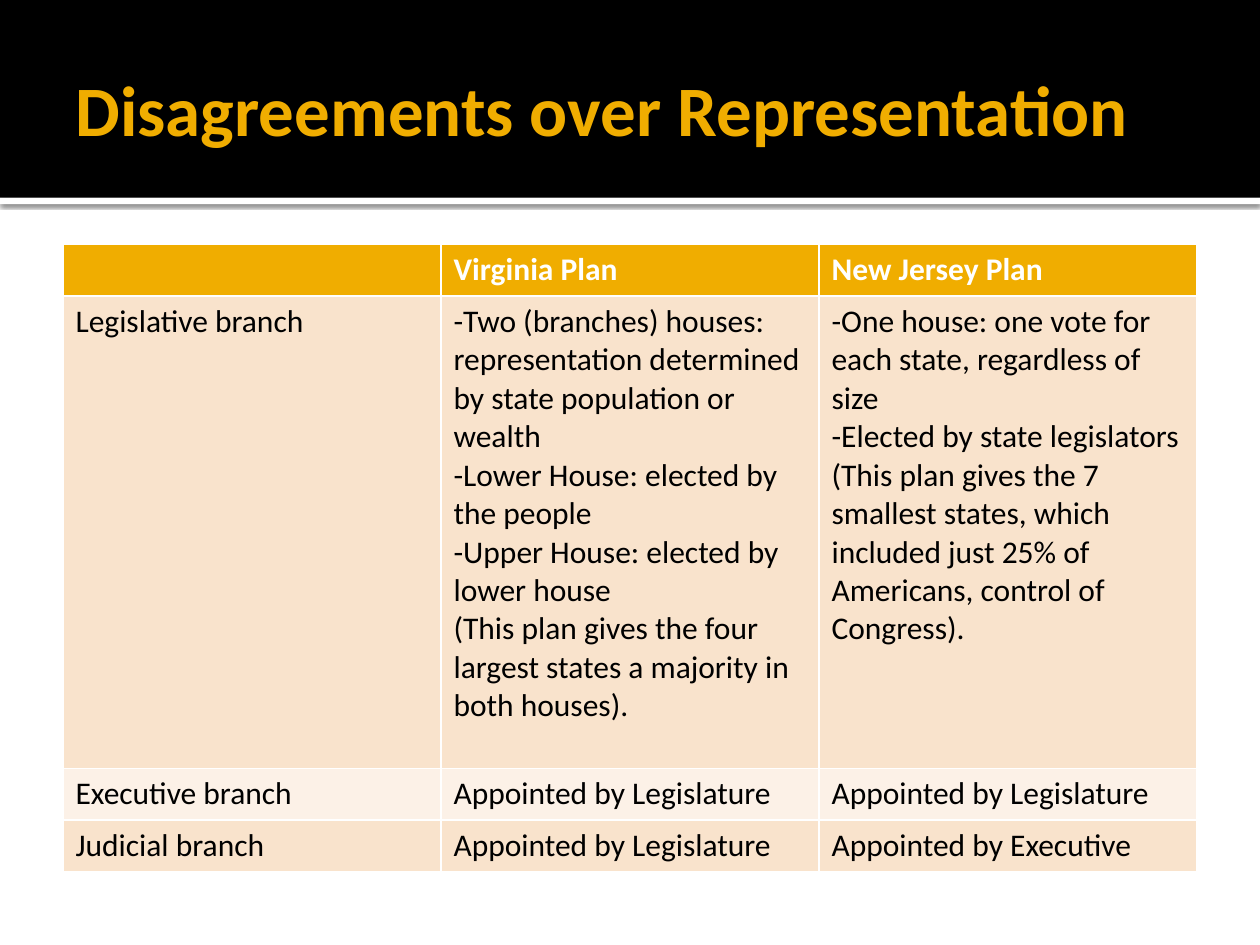
import pptx
import pptx.util
import pptx.dml.color
import pptx.enum.shapes
import pptx.enum.text
import pptx.oxml
import pptx.oxml.ns

COLORS = {
    "white": "FFFFFF",
    "black": "000000",
    "gold": "F0AD00",
    "band_dark": "F9E3CC",
    "band_light": "FCF1E7",
}
FONT = "Calibri"
WIDTH, HEIGHT = 10, 7.5
ROW_HEIGHTS = (0.41, 3.75, 0.41, 0.41)
PLANS = [
    [[], ["Virginia Plan"], ["New Jersey Plan"]],
    [
        ["Legislative branch"],
        [
            "-Two (branches) houses: representation determined by state population or wealth",
            "-Lower House: elected by the people",
            "-Upper House: elected by lower house",
            "(This plan gives the four largest states a majority in both houses).",
        ],
        [
            "-One house: one vote for each state, regardless of size",
            "-Elected by state legislators",
            "(This plan gives the 7 smallest states, which included just 25% of Americans, "
            "control of Congress).",
        ],
    ],
    [["Executive branch"], ["Appointed by Legislature"], ["Appointed by Legislature"]],
    [["Judicial branch"], ["Appointed by Legislature"], ["Appointed by Executive"]],
]


def color(name):
    """Return the named colour."""
    return pptx.dml.color.RGBColor.from_string(COLORS[name])


def inches(*lengths):
    """Convert lengths in inches to slide units."""
    return [pptx.util.Inches(length) for length in lengths]


def add_run(paragraph, text, size, color_name, bold):
    """Add one formatted run to a paragraph."""
    run = paragraph.add_run()
    run.text = text
    run.font.name = FONT
    run.font.size = pptx.util.Pt(size)
    run.font.bold = bold
    run.font.color.rgb = color(color_name)


def add_band(slide, box, color_name):
    """Add a plain filled rectangle and return it."""
    band = slide.shapes.add_shape(
        pptx.enum.shapes.MSO_SHAPE.RECTANGLE, *inches(*box))
    band.fill.solid()
    band.fill.fore_color.rgb = color(color_name)
    band.line.fill.background()
    band.shadow.inherit = False
    return band


def add_soft_shadow(shape):
    """Cast a soft shadow straight below a shape."""
    effects = shape._element.spPr.find(pptx.oxml.ns.qn("a:effectLst"))
    effects.append(pptx.oxml.parse_xml(
        f'<a:outerShdw {pptx.oxml.ns.nsdecls("a")} blurRad="31750" dist="10160" '
        f'dir="5400000" algn="t" rotWithShape="0"><a:srgbClr val="{COLORS["black"]}">'
        '<a:alpha val="60000"/></a:srgbClr></a:outerShdw>'))


def add_header(slide, box):
    """Place the black header, its white edge and the title."""
    left, top, width, height = box
    edge = add_band(slide, (left, top + height, width, 0.05), "white")
    add_soft_shadow(edge)
    add_band(slide, box, "black")
    title = slide.shapes.title
    title.left, title.top, title.width, title.height = inches(
        left + width * 0.05, top + 0.17, width * 0.9, height - 0.2)
    slide.shapes._spTree.append(title._element)
    frame = title.text_frame
    frame.word_wrap = True
    frame.auto_size = pptx.enum.text.MSO_AUTO_SIZE.NONE
    frame.vertical_anchor = pptx.enum.text.MSO_ANCHOR.MIDDLE
    frame.margin_left, frame.margin_top, frame.margin_right, frame.margin_bottom = inches(
        0.1, 0.05, 0.05, 0.05)
    paragraph = frame.paragraphs[0]
    paragraph.alignment = pptx.enum.text.PP_ALIGN.LEFT
    add_run(paragraph, "Disagreements over Representation", 40.5, "gold", True)


def fill_cell(cell, lines, fill_name, color_name, bold):
    """Fill a table cell and write one paragraph for each line."""
    cell.fill.solid()
    cell.fill.fore_color.rgb = color(fill_name)
    frame = cell.text_frame
    for index, line in enumerate(lines):
        paragraph = frame.add_paragraph() if index else frame.paragraphs[0]
        add_run(paragraph, line, 18, color_name, bold)


def add_plans_table(slide, box):
    """Place the table that compares the two plans."""
    table = slide.shapes.add_table(len(PLANS), len(PLANS[0]), *inches(*box)).table
    for row_index, (row, height) in enumerate(zip(PLANS, ROW_HEIGHTS)):
        table.rows[row_index].height = pptx.util.Inches(height)
        if row_index == 0:
            style = ("gold", "white", True)
        else:
            style = ("band_dark" if row_index % 2 else "band_light", "black", False)
        for column_index, lines in enumerate(row):
            fill_cell(table.cell(row_index, column_index), lines, *style)


def main():
    """Build and save the presentation."""
    presentation = pptx.Presentation()
    presentation.slide_width, presentation.slide_height = inches(WIDTH, HEIGHT)
    slide = presentation.slides.add_slide(presentation.slide_layouts[5])
    add_header(slide, (0, 0, WIDTH, 1.57))
    add_plans_table(slide, (WIDTH * 0.05, 1.94, WIDTH * 0.9, sum(ROW_HEIGHTS)))
    presentation.save("out.pptx")


if __name__ == "__main__":
    main()
